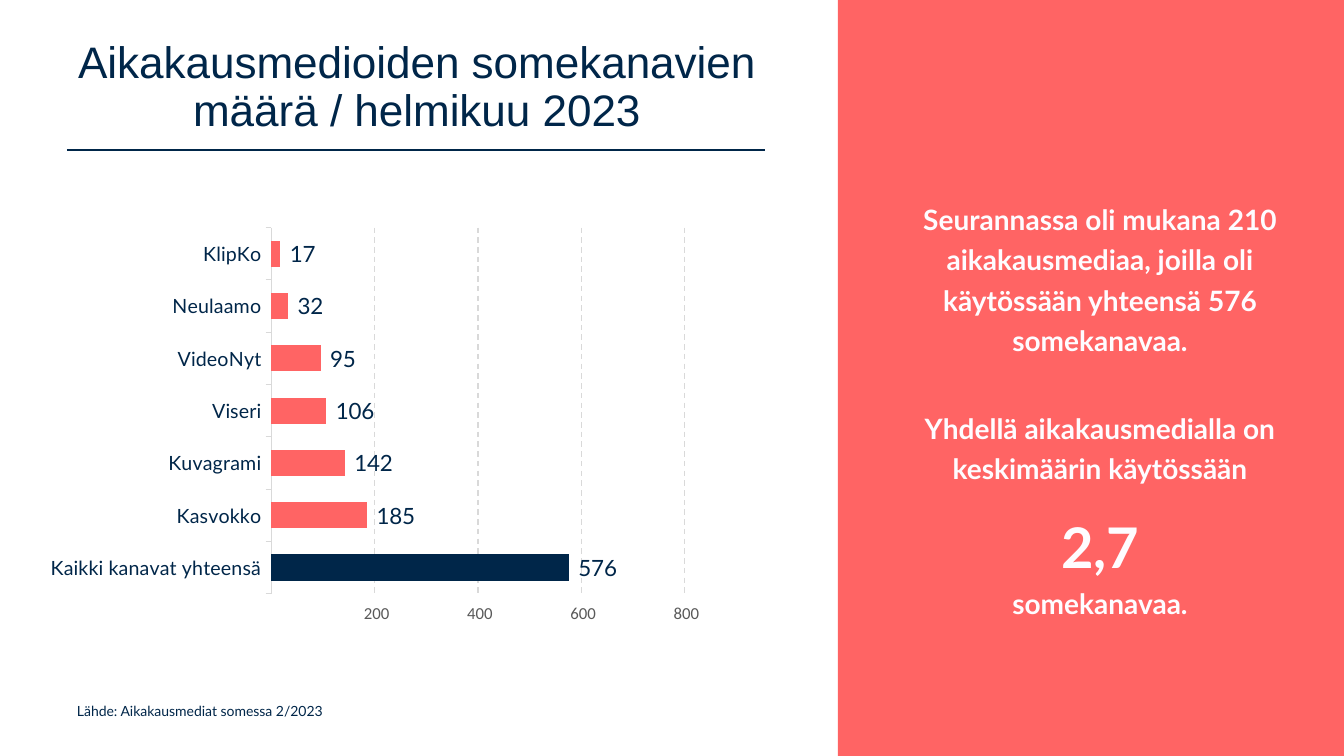
"""Build a slide with a bar chart of magazine social media channels in February 2023."""
from dataclasses import dataclass

from lxml import etree
from pptx import Presentation, util as u
from pptx.chart.data import CategoryChartData
from pptx.dml.color import RGBColor
from pptx.enum import chart as charts, dml, shapes, text
from pptx.oxml.ns import qn

TITLE = "Aikakausmedioiden somekanavien määrä / helmikuu 2023"
SOURCE = "Lähde: Aikakausmediat somessa 2/2023"
CHANNELS = [
    ("Kaikki kanavat yhteensä", 576),
    ("Kasvokko", 185),
    ("Kuvagrami", 142),
    ("Viseri", 106),
    ("VideoNyt", 95),
    ("Neulaamo", 32),
    ("KlipKo", 17),
]
FACTS = [
    ("Seurannassa oli mukana 210 aikakausmediaa, joilla oli käytössään yhteensä 576 somekanavaa.", 0),
    ("Yhdellä aikakausmedialla on keskimäärin käytössään", 34),
    ("2,7\vsomekanavaa.", 10),
]
BOXES = {
    "panel": (838, 0, 506, 756),
    "title": (67, 25, 700, 126),
    "chart": (0, 190, 838, 437),
    "facts": (911, 151, 378, 514),
    "source": (67, 698, 663, 44),
}
RULE = (67, 150, 765, 150)
PLOT = {"x": 0.324, "y": 0.086, "w": 0.493, "h": 0.838}
NUMBER_FORMAT = r"#\ ##0;\-#\ ##0;;@"


@dataclass(frozen=True)
class Theme:
    """Colours, fonts and type sizes of the slide."""
    navy: str = "002649"
    coral: str = "FF6464"
    white: str = "FEFCFF"
    grid: str = "D9D9D9"
    grey: str = "595959"
    heading: str = "Arial"
    body: str = "Lato"
    axis: str = "Calibri"
    title_size: float = 31.5
    figure_size: int = 40
    fact_size: int = 20
    label_size: int = 16
    category_size: int = 14
    axis_size: int = 12
    source_size: int = 10


THEME = Theme()


def px(*lengths):
    """Turn pixels into EMU."""
    return [u.Emu(round(length * 914400 / 100.8)) for length in lengths]


def style_font(font, name, size, color, bold=False):
    """Set the face, size, colour and weight of a font."""
    font.name, font.size, font.bold = name, u.Pt(size), bold
    font.color.rgb = RGBColor.from_string(color)


def style_line(line, color, width):
    """Give a line one colour and width."""
    line.color.rgb = RGBColor.from_string(color)
    line.width = u.Pt(width)


def paint(fill, color):
    """Set a solid fill."""
    fill.solid()
    fill.fore_color.rgb = RGBColor.from_string(color)


def add_text_box(slide, name):
    """Add a wrapping text box and return its text frame."""
    frame = slide.shapes.add_textbox(*px(*BOXES[name])).text_frame
    frame.word_wrap = True
    return frame


def add_panel(slide):
    """Draw the coloured panel and the rule under the title."""
    panel = slide.shapes.add_shape(shapes.MSO_SHAPE.RECTANGLE, *px(*BOXES["panel"]))
    panel.shadow.inherit = False
    paint(panel.fill, THEME.coral)
    panel.line.fill.background()
    rule = slide.shapes.add_connector(shapes.MSO_CONNECTOR.STRAIGHT, *px(*RULE))
    style_line(rule.line, THEME.navy, 1)
    etree.SubElement(rule._element.spPr, qn("a:effectLst"))


def add_title(slide):
    """Place and format the title."""
    title = slide.shapes.title
    title.left, title.top, title.width, title.height = px(*BOXES["title"])
    frame = title.text_frame
    frame.text = TITLE
    frame.word_wrap = True
    frame.auto_size = text.MSO_AUTO_SIZE.NONE
    frame.vertical_anchor = text.MSO_ANCHOR.MIDDLE
    paragraph = frame.paragraphs[0]
    paragraph.alignment = text.PP_ALIGN.CENTER
    paragraph.line_spacing = 0.9
    style_font(paragraph.runs[0].font, THEME.heading, THEME.title_size, THEME.navy)


def add_facts(slide):
    """Write the key facts on the panel."""
    frame = add_text_box(slide, "facts")
    frame.vertical_anchor = text.MSO_ANCHOR.MIDDLE
    for index, (fact, space) in enumerate(FACTS):
        paragraph = frame.add_paragraph() if index else frame.paragraphs[0]
        paragraph.text = fact
        paragraph.alignment = text.PP_ALIGN.CENTER
        paragraph.line_spacing = 1.2
        paragraph.space_before = u.Pt(space)
        for run in paragraph.runs:
            size = THEME.figure_size if run.text == "2,7" else THEME.fact_size
            style_font(run.font, THEME.body, size, THEME.white, bold=True)


def add_source(slide):
    """Write the source line."""
    frame = add_text_box(slide, "source")
    frame.text = SOURCE
    style_font(frame.paragraphs[0].runs[0].font, THEME.body, THEME.source_size, THEME.navy)


def fix_plot_area(chart):
    """Pin the inner plot area to its share of the chart."""
    plot_area = chart._chartSpace.chart.plotArea
    for old in plot_area.findall(qn("c:layout")):
        plot_area.remove(old)
    layout = etree.Element(qn("c:layout"))
    plot_area.insert(0, layout)
    manual = etree.SubElement(layout, qn("c:manualLayout"))
    settings = {"layoutTarget": "inner", "xMode": "edge", "yMode": "edge", **PLOT}
    for tag, value in settings.items():
        etree.SubElement(manual, qn(f"c:{tag}")).set("val", str(value))


def style_axes(chart):
    """Format the category and value axes."""
    category_axis, value_axis = chart.category_axis, chart.value_axis
    style_font(category_axis.tick_labels.font, THEME.body, THEME.category_size, THEME.navy)
    style_line(category_axis.format.line, THEME.grid, 0.75)
    style_font(value_axis.tick_labels.font, THEME.axis, THEME.axis_size, THEME.grey)
    value_axis.tick_labels.number_format = NUMBER_FORMAT
    value_axis.tick_labels.number_format_is_linked = False
    value_axis.minimum_scale, value_axis.maximum_scale, value_axis.major_unit = 0, 800, 200
    value_axis.format.line.fill.background()
    value_axis.has_major_gridlines = True
    grid = value_axis.major_gridlines.format.line
    style_line(grid, THEME.grid, 1)
    grid.dash_style = dml.MSO_LINE.DASH


def add_channel_chart(slide):
    """Add the bar chart with the total in its own colour."""
    names, values = zip(*CHANNELS)
    data = CategoryChartData()
    data.categories = names
    data.add_series("Somekanavat", values)
    chart = slide.shapes.add_chart(
        charts.XL_CHART_TYPE.BAR_CLUSTERED, *px(*BOXES["chart"]), data).chart
    chart.has_legend = chart.has_title = False
    style_font(chart.font, THEME.axis, THEME.axis_size, THEME.grey)
    style_axes(chart)
    plot = chart.plots[0]
    plot.gap_width, plot.vary_by_categories = 100, False
    series = plot.series[0]
    paint(series.format.fill, THEME.coral)
    paint(series.points[0].format.fill, THEME.navy)
    labels = series.data_labels
    labels.show_value = True
    labels.position = charts.XL_LABEL_POSITION.OUTSIDE_END
    labels.number_format, labels.number_format_is_linked = NUMBER_FORMAT, False
    style_font(labels.font, THEME.body, THEME.label_size, THEME.navy)
    fix_plot_area(chart)


def main():
    """Build and save the presentation."""
    presentation = Presentation()
    presentation.slide_width, presentation.slide_height = px(1344, 756)
    slide = presentation.slides.add_slide(presentation.slide_layouts[5])
    add_panel(slide)
    add_title(slide)
    add_facts(slide)
    add_channel_chart(slide)
    add_source(slide)
    presentation.save("out.pptx")


if __name__ == "__main__":
    main()
